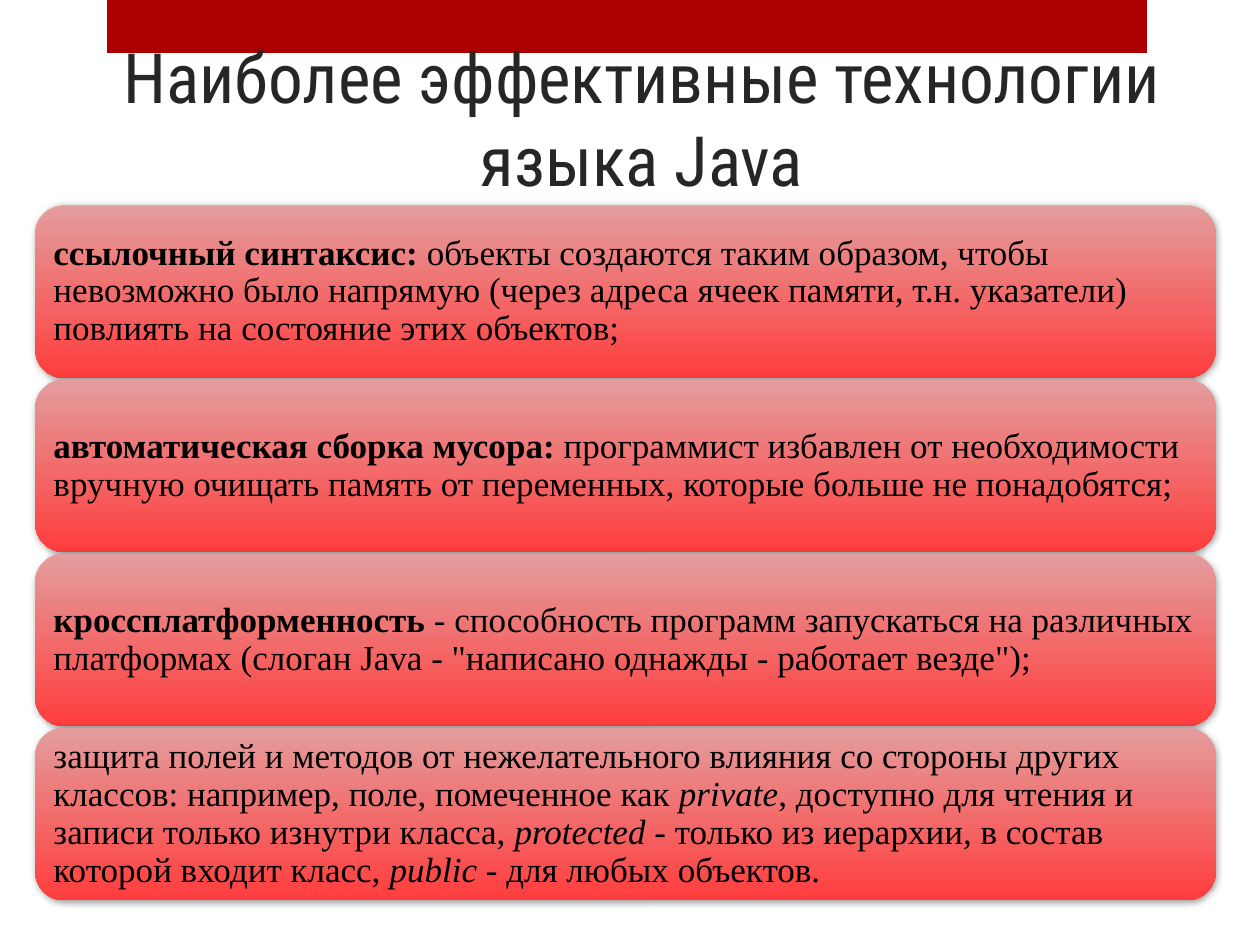
from lxml import etree
from pptx import Presentation
from pptx.dml.color import RGBColor
from pptx.enum import shapes, text
from pptx.oxml.ns import qn
from pptx.util import Cm, Pt

COLORS = {"bar": "AD0101", "title": "262626", "body": "000000",
          "top": "E49D9D", "base": "FF3D3D", "shade": "000000"}

# Each card is a list of (text, style): "b" bold, "i" italic, "" plain.
CARDS = [
    [("ссылочный синтаксис: ", "b"),
     ("объекты создаются таким образом, чтобы невозможно было напрямую "
      "(через адреса ячеек памяти, т.н. указатели) повлиять на состояние "
      "этих объектов;", "")],
    [("автоматическая сборка мусора: ", "b"),
     ("программист избавлен от необходимости вручную очищать память от "
      "переменных, которые больше не понадобятся;", "")],
    [("кроссплатформенность ", "b"),
     ("- способность программ запускаться на различных платформах "
      "(слоган Java - \"написано однажды - работает везде\");", "")],
    [("защита полей и методов от нежелательного влияния со стороны других "
      "классов: например, поле, помеченное как ", ""),
     ("private", "i"),
     (", доступно для чтения и записи только изнутри класса, ", ""),
     ("protected", "i"),
     (" - только из иерархии, в состав которой входит класс, ", ""),
     ("public", "i"),
     (" - для любых объектов.", "")],
]


def rgb(name):
    return RGBColor.from_string(COLORS[name])


def put(item, **values):
    for key, value in values.items():
        setattr(item, key, value)


class Deck:
    head = {"name": "Roboto Condensed", "size": Pt(39.6)}
    body = {"name": "Times New Roman", "size": Pt(20)}

    def __init__(self, wide, high):
        self.prs = Presentation()
        put(self.prs, slide_width=wide, slide_height=high)
        self.slide = self.prs.slides.add_slide(self.prs.slide_layouts[5])

    def title(self, words, left, top, width, height):
        shape = self.slide.shapes.title
        put(shape, left=left, top=top, width=width, height=height)
        frame = shape.text_frame
        put(frame, text=words, word_wrap=True,
            auto_size=text.MSO_AUTO_SIZE.NONE,
            vertical_anchor=text.MSO_ANCHOR.BOTTOM)
        para = frame.paragraphs[0]
        para.alignment = text.PP_ALIGN.CENTER
        font = para.runs[0].font
        put(font, **self.head)
        font.color.rgb = rgb("title")

    def shape(self, kind, *box):
        shape = self.slide.shapes.add_shape(kind, *box)
        shape.shadow.inherit = False
        shape.line.fill.background()
        return shape

    def bar(self, *box):
        """Draw the red strip behind everything else."""
        bar = self.shape(shapes.MSO_SHAPE.RECTANGLE, *box)
        bar.fill.solid()
        bar.fill.fore_color.rgb = rgb("bar")
        self.slide.shapes._spTree.insert(2, bar._element)

    def shade(self, shape):
        """Give the shape a soft shadow below it."""
        effects = shape._element.spPr.find(qn("a:effectLst"))
        outer = etree.SubElement(effects, qn("a:outerShdw"), blurRad=str(Pt(4)),
                                 dist=str(Pt(1)), dir=str(88 * 60000),
                                 rotWithShape="0")
        color = etree.SubElement(outer, qn("a:srgbClr"), val=COLORS["shade"])
        etree.SubElement(color, qn("a:alpha"), val="40000")

    def card(self, parts, *box):
        card = self.shape(shapes.MSO_SHAPE.ROUNDED_RECTANGLE, *box)
        self.shade(card)
        card.fill.gradient()
        card.fill.gradient_angle = 270
        for stop, name, spot in zip(card.fill.gradient_stops,
                                    ("top", "base"), (0, 1)):
            stop.color.rgb = rgb(name)
            stop.position = spot
        frame = card.text_frame
        put(frame, word_wrap=True, vertical_anchor=text.MSO_ANCHOR.MIDDLE)
        for side in ("left", "right", "top", "bottom"):
            setattr(frame, f"margin_{side}", Cm(0.2))
        para = frame.paragraphs[0]
        put(para, alignment=text.PP_ALIGN.LEFT, line_spacing=0.9)
        for words, style in parts:
            run = para.add_run()
            run.text = words
            put(run.font, bold=style == "b", italic=style == "i", **self.body)
            run.font.color.rgb = rgb("body")


def main():
    deck = Deck(Cm(25.4), Cm(19.05))
    deck.bar(Cm(2.16), Cm(0), Cm(20.96), Cm(1.07))
    deck.title("Наиболее эффективные технологии языка Java",
               Cm(1.3), Cm(2.34), Cm(23.29), Cm(1.83))
    for row, parts in enumerate(CARDS):
        deck.card(parts, Cm(0.71), Cm(4.14 + 3.51 * row), Cm(23.8), Cm(3.48))
    deck.prs.save("out.pptx")


if __name__ == "__main__":
    main()
